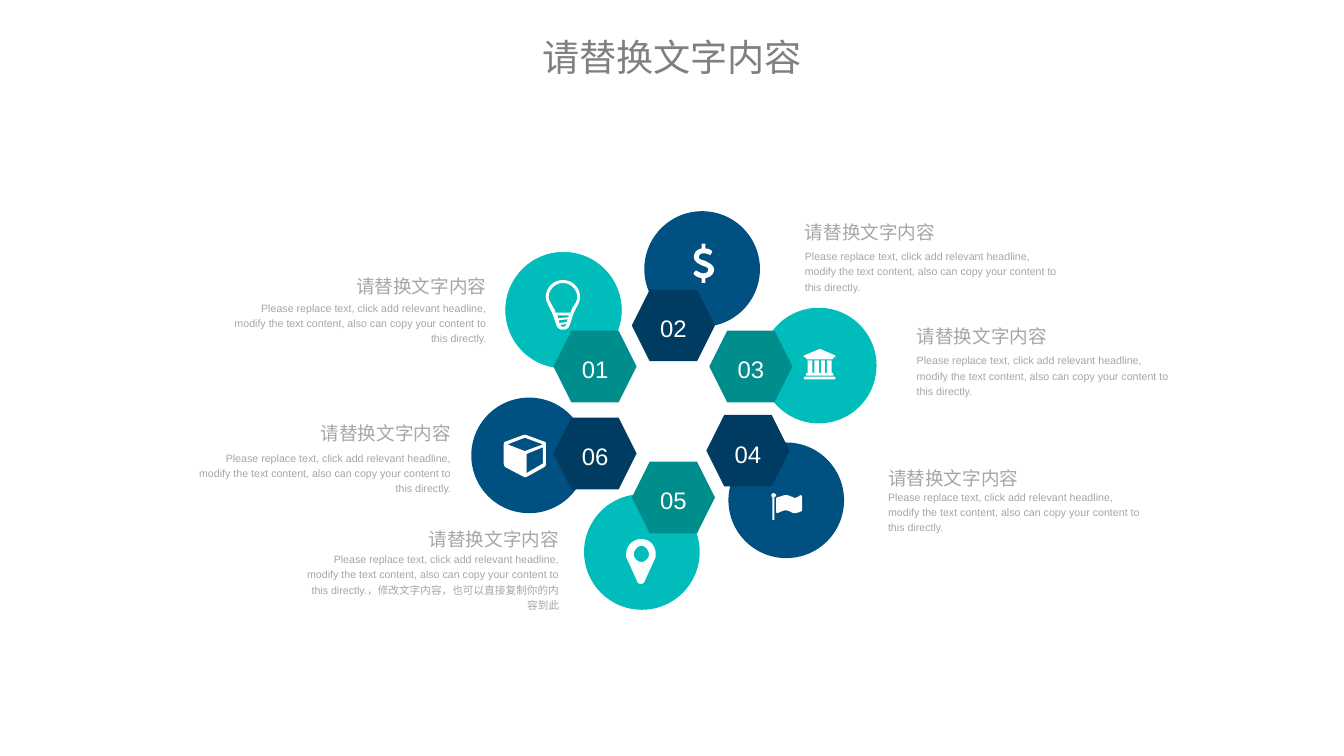
"""Build a slide with a ring of six numbered hexagons, icons and captions."""
from dataclasses import dataclass

from pptx import Presentation
from pptx.dml.color import RGBColor
from pptx.enum.shapes import MSO_SHAPE as Preset
from pptx.enum.text import MSO_ANCHOR as Anchor, PP_ALIGN as Align
from pptx.util import Inches, Pt

WHITE = RGBColor(0xFF, 0xFF, 0xFF)
TEAL = RGBColor(0x00, 0xBD, 0xBC)
DARK_TEAL = RGBColor(0x00, 0x8E, 0x8D)
BLUE = RGBColor(0x00, 0x50, 0x81)
NAVY = RGBColor(0x00, 0x3C, 0x61)
GREY = RGBColor(0x80, 0x80, 0x80)
LIGHT_GREY = RGBColor(0xA6, 0xA6, 0xA6)

CELL = Inches(0.1)
COLUMNS, ROWS = 140.6, 79.1
ICON_UNIT = CELL / 10
CURVE_STEPS = 8
CIRCLE = 12.1
HEXAGON_WIDTH, HEXAGON_HEIGHT = 8.7, 7.5
HEADING_WIDTH, HEADING_HEIGHT = 17.2, 2.8
BODY_WIDTH, BODY_HEIGHT = 26.5, 4.7

HEADING = "请替换文字内容"
BODY = ("Please replace text, click add relevant headline, modify the text "
        "content, also can copy your content to this directly.")
LONG_BODY = BODY + "，修改文字内容，也可以直接复制你的内容到此"

BULB = [
    [(18, 0), (8, 0, 0, 8, 0, 18), (0, 24, 6, 31, 8, 38), (11, 46, 11, 52, 18, 52),
     (25, 52, 25, 47, 28, 38), (30, 31, 36, 24, 36, 18), (36, 8, 28, 0, 18, 0)],
    [(26, 34), (10, 34), (10, 32, 9, 30, 8, 29), (6, 25, 3, 21, 3, 18),
     (3, 10, 10, 3, 18, 3), (26, 3, 33, 10, 33, 18), (33, 21, 31, 25, 28, 29),
     (27, 30, 27, 32, 26, 34)],
    [(13, 40), (12, 37), (24, 37), (24, 39)],
    [(22, 44), (14, 45), (14, 42), (23, 41)],
    [(18, 49), (17, 49, 16, 48, 15, 47), (22, 46), (21, 48, 20, 49, 18, 49)],
]
DOLLAR = [
    [(13, 36), (13, 41), (9, 41), (9, 36), (3, 35, 1, 32, 1, 32), (0.5, 31), (3, 28),
     (4, 28, 7, 31, 11, 31), (13, 31, 16, 30, 16, 27), (16, 25, 13, 24, 10, 23),
     (6, 21, 1, 19, 1, 14), (1, 9, 4, 6, 9, 5), (9, 0), (13, 0), (13, 5),
     (18, 5, 20, 8, 20, 8), (20, 9), (18, 12), (18, 12, 15, 10, 11, 10),
     (8, 10, 6, 12, 6, 14), (6, 16, 9, 17, 13, 18), (16, 20, 22, 22, 22, 27),
     (22, 32, 18, 35, 13, 36)],
]
BANK = [
    [(33, 7), (33, 9), (31, 9), (30, 11), (3, 11), (2, 9), (0, 9), (0, 7), (17, 0)],
    [(33, 30), (33, 32), (0, 32), (0, 30), (1, 29), (32, 29)],
    [(4, 12), (9, 12), (9, 25), (11, 25), (11, 12), (16, 12), (16, 25), (18, 25),
     (18, 12), (22, 12), (22, 25), (24, 25), (24, 12), (29, 12), (29, 25), (30, 25),
     (31, 27), (31, 28), (2, 28), (2, 27), (3, 25), (4, 25)],
]
FLAG = [
    [(3, 4), (3, 28), (1, 28), (1, 4), (0, 4, 0, 3, 0, 2), (0, 1, 1, 0, 2, 0),
     (3, 0, 5, 1, 5, 2), (5, 3, 4, 4, 3, 4)],
    [(32, 18), (32, 18, 32, 19, 31, 19), (29, 20, 26, 21, 24, 21),
     (21, 21, 19, 18, 15, 18), (12, 18, 9, 20, 6, 21), (5, 20), (5, 5),
     (6, 5, 6, 4, 7, 4), (9, 4, 12, 2, 15, 2), (18, 2, 19, 3, 22, 4),
     (23, 4, 23, 5, 24, 5), (27, 5, 30, 2, 31, 2), (31, 2, 32, 3, 32, 4)],
]
PIN = [
    [(30, 21), (19, 45), (18, 46, 17, 47, 16, 47), (14, 47, 12, 46, 12, 45), (1, 21),
     (0, 20, 0, 17, 0, 16), (0, 7, 7, 0, 16, 0), (25, 0, 31, 7, 31, 16),
     (31, 17, 31, 20, 30, 21)],
    [(16, 7), (12, 7, 8, 12, 8, 16), (8, 20, 12, 24, 16, 24),
     (20, 24, 24, 20, 24, 16), (24, 12, 20, 7, 16, 7)],
]
CUBE = [
    [(44, 30), (44, 32, 44, 33, 42, 34), (24, 44), (22, 44.5), (21, 44), (2, 34),
     (1, 33, 0, 32, 0, 30), (0, 10), (0, 8, 1, 7, 2, 7), (21, 0), (23, 0), (42, 7),
     (44, 7, 44, 8, 44, 10)],
    [(41, 10), (22, 3), (4, 10), (22, 17)],
    [(41, 30), (41, 13), (24, 20), (24, 40)],
]


@dataclass
class Step:
    number: str
    circle: tuple
    hexagon: tuple
    icon: list
    icon_at: tuple
    text_edge: float
    heading_top: float
    body_top: float
    align: Align
    body: str = BODY
    outlined: bool = False


STEPS = [
    Step("01", (52.9, 26.4), (57.9, 34.6), BULB, (57.1, 29.3), 50.9, 28.3, 31.3,
         Align.RIGHT, outlined=True),
    Step("02", (67.4, 22.1), (66.1, 30.3), DOLLAR, (72.5, 25.5), 84.2, 22.6, 25.9, Align.LEFT),
    Step("03", (79.6, 32.2), (74.2, 34.6), BANK, (84.1, 36.5), 95.9, 33.5, 36.8, Align.LEFT),
    Step("04", (76.2, 46.3), (73.9, 43.4), FLAG, (80.7, 51.6), 92.9, 48.4, 51.1, Align.LEFT),
    Step("05", (61.1, 51.7), (66.1, 48.3), PIN, (65.5, 56.4), 58.5, 54.8, 57.6,
         Align.RIGHT, body=LONG_BODY),
    Step("06", (49.3, 41.6), (57.9, 43.7), CUBE, (52.7, 45.5), 47.2, 43.7, 47, Align.RIGHT),
]


def flatten(outline):
    points = [outline[0]]
    for segment in outline[1:]:
        if len(segment) == 2:
            points.append(segment)
            continue
        x0, y0 = points[-1]
        x1, y1, x2, y2, x3, y3 = segment
        for step in range(1, CURVE_STEPS + 1):
            t = step / CURVE_STEPS
            a, b, c, d = (1 - t) ** 3, 3 * t * (1 - t) ** 2, 3 * t * t * (1 - t), t ** 3
            points.append((a * x0 + b * x1 + c * x2 + d * x3,
                           a * y0 + b * y1 + c * y2 + d * y3))
    return [(x * ICON_UNIT, y * ICON_UNIT) for x, y in points]


class Deck:
    def __init__(self, font):
        self.font = font
        self.presentation = Presentation()
        self.presentation.slide_width = self.cells(COLUMNS)
        self.presentation.slide_height = self.cells(ROWS)
        self.slide = self.presentation.slides.add_slide(self.presentation.slide_layouts[6])

    def cells(self, count):
        return round(count * CELL)

    def paint(self, shape, color, outlined=False):
        shape.shadow.inherit = False
        shape.fill.solid()
        shape.fill.fore_color.rgb = color
        if outlined:
            shape.line.color.rgb = color
            shape.line.width = Pt(0.5)
        else:
            shape.line.fill.background()

    def fill_text(self, shape, text, size, color, align, spacing=1.2):
        frame = shape.text_frame
        frame.word_wrap = True
        frame.margin_left = frame.margin_right = frame.margin_top = frame.margin_bottom = 0
        paragraph = frame.paragraphs[0]
        paragraph.alignment = align
        paragraph.line_spacing = spacing
        run = paragraph.add_run()
        run.text = text
        run.font.name = self.font
        run.font.size = Pt(size)
        run.font.color.rgb = color

    def preset(self, kind, at, width, height, color, outlined=False):
        shape = self.slide.shapes.add_shape(kind, *map(self.cells, (*at, width, height)))
        self.paint(shape, color, outlined)
        return shape

    def hexagon(self, at, number, color):
        shape = self.preset(Preset.HEXAGON, at, HEXAGON_WIDTH, HEXAGON_HEIGHT, color)
        shape.text_frame.vertical_anchor = Anchor.MIDDLE
        self.fill_text(shape, number, 18, WHITE, Align.CENTER)

    def icon(self, at, outlines):
        first, *others = map(flatten, outlines)
        builder = self.slide.shapes.build_freeform(*first[0])
        builder.add_line_segments(first[1:])
        for points in others:
            builder.move_to(*points[0])
            builder.add_line_segments(points[1:])
        self.paint(builder.convert_to_shape(*map(self.cells, at)), WHITE)

    def text(self, at, width, height, text, size, color, align, spacing=1.2):
        box = self.slide.shapes.add_textbox(*map(self.cells, (*at, width, height)))
        self.fill_text(box, text, size, color, align, spacing)

    def caption(self, step):
        lines = [(step.body_top, BODY_WIDTH, BODY_HEIGHT, step.body, 8),
                 (step.heading_top, HEADING_WIDTH, HEADING_HEIGHT, HEADING, 14)]
        for top, width, height, text, size in lines:
            left = step.text_edge - (width if step.align == Align.RIGHT else 0)
            self.text((left, top), width, height, text, size, LIGHT_GREY, step.align)


def main():
    deck = Deck("Arial")
    for index, step in enumerate(STEPS):
        deck.preset(Preset.OVAL, step.circle, CIRCLE, CIRCLE, (TEAL, BLUE)[index % 2],
                    step.outlined)
    for index, step in enumerate(STEPS):
        deck.hexagon(step.hexagon, step.number, (DARK_TEAL, NAVY)[index % 2])
    for step in STEPS:
        deck.icon(step.icon_at, step.icon)
        deck.caption(step)
    deck.text((54.7, 2.2), 31.2, 5.5, HEADING, 28, GREY, Align.CENTER, 1.3)
    deck.presentation.save("out.pptx")


if __name__ == "__main__":
    main()
